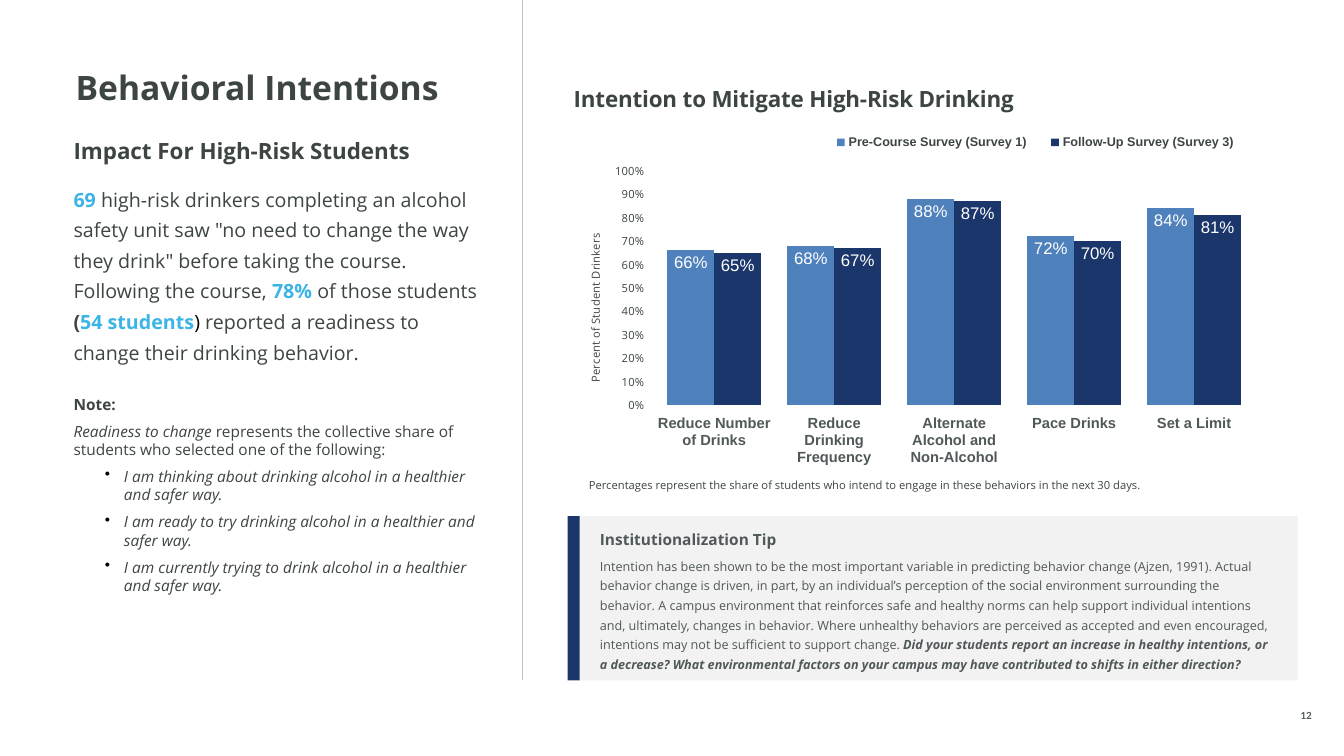
import pptx
import pptx.chart.data
import pptx.dml.color
import pptx.enum.chart
import pptx.enum.shapes
import pptx.enum.text
import pptx.oxml
import pptx.oxml.ns
import pptx.util
from pptx.util import Inches, Pt

RGBColor = pptx.dml.color.RGBColor
qn = pptx.oxml.ns.qn
ANCHOR = pptx.enum.text.MSO_ANCHOR
ALIGN = pptx.enum.text.PP_ALIGN

INK = RGBColor(0x3D, 0x45, 0x43)
GRAY = RGBColor(0x51, 0x58, 0x59)
SKY = RGBColor(0x3C, 0xB4, 0xE5)
BLUE = RGBColor(0x4F, 0x81, 0xBD)
NAVY = RGBColor(0x1B, 0x36, 0x6A)
PALE = RGBColor(0xF2, 0xF2, 0xF2)
RULE = RGBColor(0xC1, 0xC1, 0xC0)
BLACK = RGBColor(0, 0, 0)
WHITE = RGBColor(0xFF, 0xFF, 0xFF)


def style(size, color=INK, name="Open Sans", bold=False, italic=False):
    return {"size": Pt(size), "color": color, "name": name, "bold": bold, "italic": italic}


# Content: each paragraph is (paragraph format, runs), each run is (text, style)
HEADING = [({"line_spacing": 0.9}, [("Behavioral Intentions", style(24, bold=True))])]
FOOTNOTE = [({}, [("Percentages represent the share of students who intend to engage in "
                   "these behaviors in the next 30 days.", style(8))])]
PAGE_NUMBER = [({"alignment": ALIGN.CENTER}, [("12", style(7, GRAY, "Lato", bold=True))])]

LEAD, LEAD_STRONG = style(14), style(14, SKY, bold=True)
BULLETS = [
    "I am thinking about drinking alcohol in a healthier and safer way.",
    "I am ready to try drinking alcohol in a healthier and safer way.",
    "I am currently trying to drink alcohol in a healthier and safer way.",
]
IMPACT = [
    ({"line_spacing": 1.3}, [("Impact For High-Risk Students", style(16, bold=True))]),
    ({"line_spacing": 1.3, "space_before": Pt(12)}, [
        ("69 ", LEAD_STRONG),
        ('high-risk drinkers completing an alcohol safety unit saw "no need to change the way '
         'they drink" before taking the course. Following the course, ', LEAD),
        ("78% ", LEAD_STRONG),
        ("of those students ", LEAD),
        ("(", style(14, bold=True)),
        ("54 students", LEAD_STRONG),
        (") ", style(14, BLACK)),
        ("reported a readiness to change their drinking behavior.", LEAD),
    ]),
    ({"line_spacing": 1.3, "space_before": Pt(18)}, [("Note:", style(11, bold=True))]),
    ({"space_before": Pt(6)}, [
        ("Readiness to change ", style(11, italic=True)),
        ("represents the collective share of students who selected one of the following:",
         style(11)),
    ]),
] + [({"space_before": Pt(6), "bullet": True}, [(text, style(11, italic=True))])
     for text in BULLETS]

TIP = [
    ({"line_spacing": 1.3}, [("Institutionalization Tip", style(11, GRAY, bold=True))]),
    ({"line_spacing": 1.3, "space_before": Pt(4)}, [
        ("Intention has been shown to be the most important variable in predicting behavior "
         "change (Ajzen, 1991). Actual behavior change is driven, in part, by an individual’s "
         "perception of the social environment surrounding the behavior. A campus environment "
         "that reinforces safe and healthy norms can help support individual intentions and, "
         "ultimately, changes in behavior. Where unhealthy behaviors are perceived as accepted "
         "and even encouraged, intentions may not be sufficient to support change. ",
         style(9, GRAY)),
        ("Did your students report an increase in healthy intentions, or a decrease? What "
         "environmental factors on your campus may have contributed to shifts in either "
         "direction?", style(9, GRAY, bold=True, italic=True)),
    ]),
]

CHART_TITLE = "Intention to Mitigate High-Risk Drinking"
AXIS_TITLE = "Percent of Student Drinkers"
BEHAVIORS = ["Reduce Number of Drinks", "Reduce Drinking Frequency",
             "Alternate Alcohol and Non-Alcohol", "Pace Drinks", "Set a Limit"]
SURVEYS = [
    ("Pre-Course Survey (Survey 1)", BLUE, [0.66, 0.68, 0.88, 0.72, 0.84]),
    ("Follow-Up Survey (Survey 3)", NAVY, [0.65, 0.67, 0.87, 0.7, 0.81]),
]


def set_font(font, values):
    for key, value in values.items():
        if key == "color":
            font.color.rgb = value
        else:
            setattr(font, key, value)


def add_bullet(paragraph):
    properties = paragraph._p.get_or_add_pPr()
    properties.set("marL", str(Inches(0.5)))
    properties.set("indent", str(Inches(-0.19)))
    color = pptx.oxml.parse_xml(
        f'<a:buClr {pptx.oxml.ns.nsdecls("a")}><a:srgbClr val="{BLACK}"/></a:buClr>')
    character = pptx.oxml.parse_xml(f'<a:buChar {pptx.oxml.ns.nsdecls("a")} char="•"/>')
    properties.extend([color, character])


def fill_text(frame, paragraphs, anchor=ANCHOR.TOP, side=0):
    settings = {"word_wrap": True, "vertical_anchor": anchor, "margin_left": Inches(side),
                "margin_right": Inches(side), "margin_top": 0, "margin_bottom": 0}
    for key, value in settings.items():
        setattr(frame, key, value)
    for index, (formats, runs) in enumerate(paragraphs):
        paragraph = frame.add_paragraph() if index else frame.paragraphs[0]
        paragraph.alignment = ALIGN.LEFT
        for key, value in formats.items():
            if key == "bullet":
                add_bullet(paragraph)
            else:
                setattr(paragraph, key, value)
        for text, values in runs:
            run = paragraph.add_run()
            run.text = text
            set_font(run.font, values)


def place(element, **fractions):
    """Fix a chart part at fractions of the chart area."""
    for old in element.findall(qn("c:layout")):
        element.remove(old)
    inner = '<c:layoutTarget val="inner"/>' if element.tag == qn("c:plotArea") else ""
    modes = '<c:xMode val="edge"/><c:yMode val="edge"/>'
    sizes = "".join(f'<c:{key} val="{value}"/>' for key, value in fractions.items())
    layout = pptx.oxml.parse_xml(
        f'<c:layout {pptx.oxml.ns.nsdecls("c")}><c:manualLayout>{inner}{modes}{sizes}'
        "</c:manualLayout></c:layout>")
    overlay = element.find(qn("c:overlay"))
    if overlay is None:
        element.insert(0, layout)
    else:
        overlay.addprevious(layout)


presentation = pptx.Presentation()
presentation.slide_width, presentation.slide_height = Inches(13.33), Inches(7.5)
slide = presentation.slides.add_slide(presentation.slide_layouts[6])

# Divider
divider = slide.shapes.add_connector(pptx.enum.shapes.MSO_CONNECTOR.STRAIGHT,
                                     Inches(5.18), 0, Inches(5.18), Inches(6.75))
divider.line.color.rgb, divider.line.width = RULE, Pt(1)
divider._element.spPr.append(
    pptx.oxml.parse_xml(f'<a:effectLst {pptx.oxml.ns.nsdecls("a")}/>'))

# Text boxes
for box, paragraphs, anchor in [
    ((0.75, 0.71, 3.94, 0.7), HEADING, ANCHOR.TOP),
    ((0.73, 1.28, 4.13, 5.34), IMPACT, ANCHOR.TOP),
    ((5.84, 4.71, 6.86, 0.17), FOOTNOTE, ANCHOR.BOTTOM),
    ((12.7, 7.01, 0.51, 0.15), PAGE_NUMBER, ANCHOR.BOTTOM),
]:
    text_box = slide.shapes.add_textbox(*map(Inches, box))
    fill_text(text_box.text_frame, paragraphs, anchor)

# Chart
data = pptx.chart.data.CategoryChartData(number_format="0%")
data.categories = BEHAVIORS
for name, color, values in SURVEYS:
    data.add_series(name, values)
chart = slide.shapes.add_chart(pptx.enum.chart.XL_CHART_TYPE.COLUMN_CLUSTERED,
                               *map(Inches, (5.58, 0.69, 7, 4.01)), data).chart
set_font(chart.font, style(10, GRAY, "Arial"))
plot = chart.plots[0]
plot.gap_width, plot.overlap, plot.vary_by_categories = 56, 0, False
for series, (name, color, values) in zip(plot.series, SURVEYS):
    series.format.fill.solid()
    series.format.fill.fore_color.rgb = color
    labels = series.data_labels
    for key, value in {"show_value": True, "number_format": "0%",
                       "number_format_is_linked": False,
                       "position": pptx.enum.chart.XL_LABEL_POSITION.INSIDE_END}.items():
        setattr(labels, key, value)
    set_font(labels.font, style(12, WHITE, "Arial"))

# Axes
value_axis, category_axis = chart.value_axis, chart.category_axis
for key, value in {"minimum_scale": 0, "maximum_scale": 1, "major_unit": 0.1,
                   "has_major_gridlines": False}.items():
    setattr(value_axis, key, value)
value_axis.tick_labels.number_format = "0%"
value_axis.tick_labels.number_format_is_linked = False
for axis, values in [(value_axis, style(8)),
                     (category_axis, style(10.5, GRAY, "Arial", bold=True))]:
    axis.format.line.fill.background()
    set_font(axis.tick_labels.font, values)

# Chart titles and legend
for title, text, values in [(chart.chart_title, CHART_TITLE, style(16, bold=True)),
                            (value_axis.axis_title, AXIS_TITLE, style(8))]:
    fill_text(title.text_frame, [({}, [(text, values)])])
value_axis.axis_title._element.find(".//" + qn("a:bodyPr")).set("rot", "-5400000")
chart.has_legend = True
chart.legend.position = pptx.enum.chart.XL_LEGEND_POSITION.TOP
chart.legend.include_in_layout = False
set_font(chart.legend.font, style(9, name="Arial", bold=True))
place(chart.chart_title._element, x=0.01, y=0.02)
place(value_axis.axis_title._element, x=0.03, y=0.4)
place(chart.legend._element, x=0.36, y=0.15, w=0.62, h=0.06)
place(chart._chartSpace.chart.plotArea, x=0.13, y=0.25, w=0.85, h=0.58)

# Tip panel with its accent bar
panel = slide.shapes.add_group_shape()
for left, width, color, paragraphs in [(5.75, 7.12, PALE, TIP), (5.63, 0.12, NAVY, [])]:
    shape = panel.shapes.add_shape(pptx.enum.shapes.MSO_SHAPE.RECTANGLE, Inches(left),
                                   Inches(5.12), Inches(width), Inches(1.63))
    shape.shadow.inherit = False
    shape.fill.solid()
    shape.fill.fore_color.rgb = color
    shape.line.fill.background()
    fill_text(shape.text_frame, paragraphs, ANCHOR.MIDDLE, 0.2 if paragraphs else 0)

presentation.save("out.pptx")
